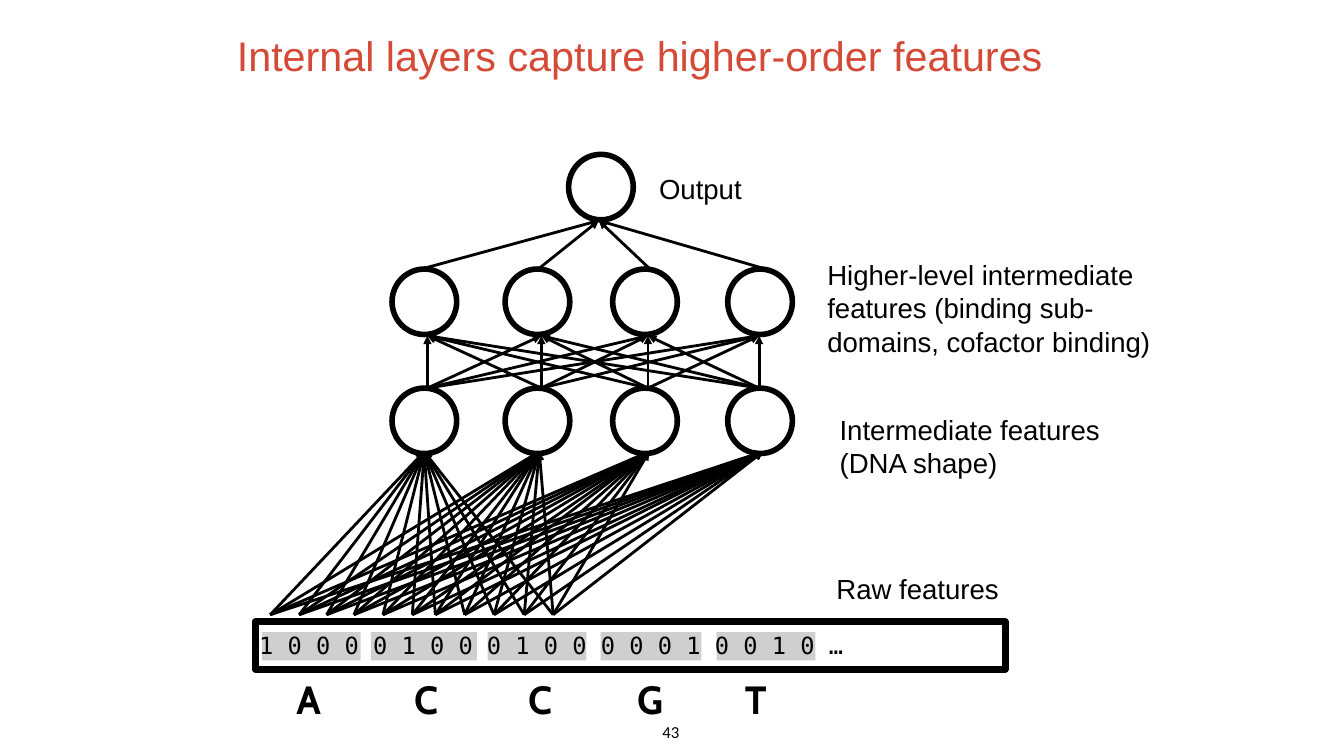
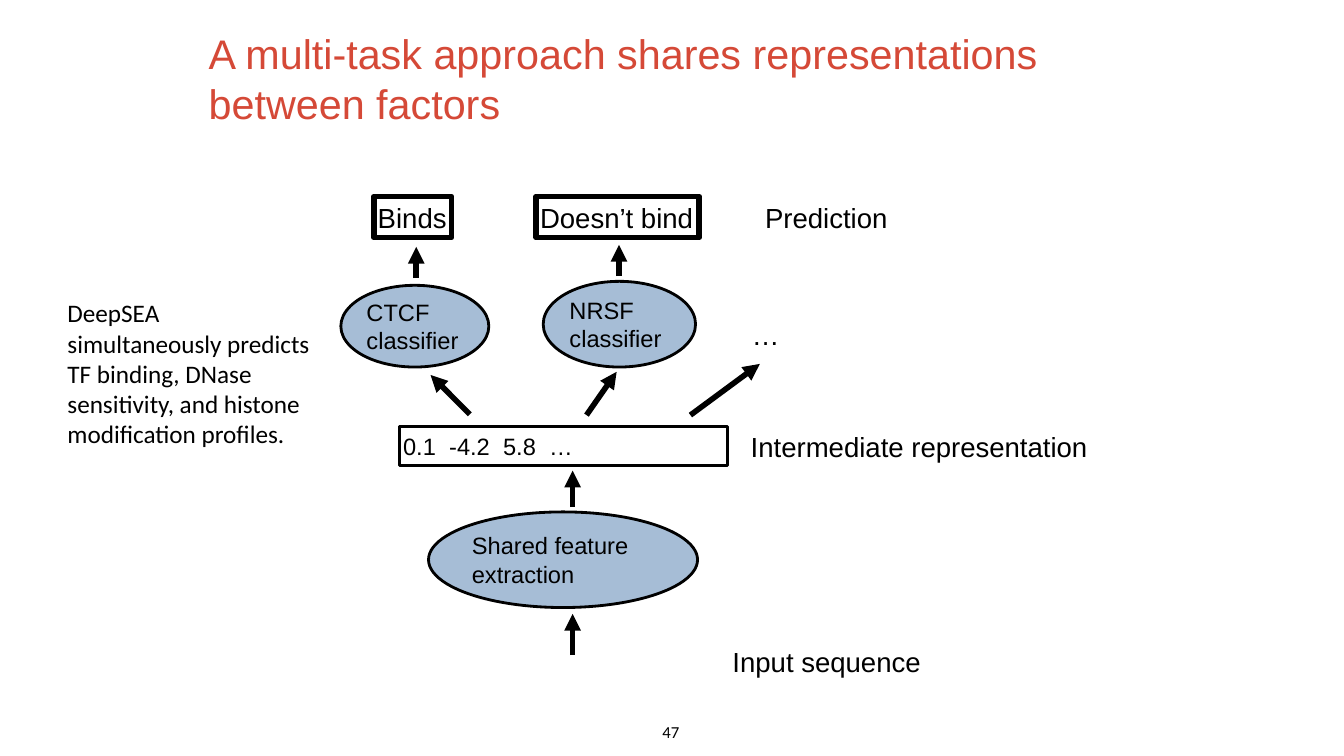
from dataclasses import dataclass
from itertools import product

from lxml.etree import SubElement
from pptx import Presentation
from pptx.dml.color import RGBColor
from pptx.enum.shapes import MSO_CONNECTOR, MSO_SHAPE
from pptx.enum.text import MSO_ANCHOR, MSO_AUTO_SIZE, PP_ALIGN
from pptx.oxml.ns import qn
from pptx.util import Cm, Pt


@dataclass(frozen=True)
class Theme:
    title_color: RGBColor = RGBColor(0xD5, 0x49, 0x37)
    ink: RGBColor = RGBColor(0, 0, 0)
    paper: RGBColor = RGBColor(0xFF, 0xFF, 0xFF)
    module_fill: RGBColor = RGBColor(0xA6, 0xBD, 0xD6)
    font: str = "Arial"
    note_font: str = "Calibri"
    code_font: str = "DejaVu Sans Mono"
    letter_font: str = "Cabin"
    title_size: float = 29.5
    letter_size: float = 28.1
    label_size: float = 19.7
    note_size: float = 18
    module_size: float = 16.9
    number_size: float = 12
    thin: float = 2
    thick: float = 4
    frame: float = 5


THEME = Theme()

NODE_WIDTH, NODE_HEIGHT = 1.63, 1.65
NODE_LEFTS = (9.88, 12.73, 15.44, 18.34)
UPPER_TOP, LOWER_TOP = 6.78, 9.78
OUTER_PORTS = (10.69, 13.59, 16.36, 19.23)
INNER_PORTS = (10.77, 13.64, 16.33, 19.13)
INPUT_PORTS = (6.81, 7.54, 8.23, 8.92, 9.65, 10.39, 10.97, 11.71, 12.45, 13.21, 13.94)
BASES = (
    ("A", 7.34, 6.6, 2.49),
    ("C", 10.31, 9.35, 2.67),
    ("C", 13.18, 12.29, 2.49),
    ("G", 15.93, 15.14, 2.54),
    ("T", 18.64, 18.06, 2.49),
)


def write_text(shape, text, *, size=THEME.label_size, font=THEME.font, color=THEME.ink,
               bold=False, align=PP_ALIGN.LEFT, anchor=MSO_ANCHOR.MIDDLE,
               insets=(0.1, 0.1), wrap=True, grow=False, tabs=()):
    frame = shape.text_frame
    frame.word_wrap = wrap
    frame.auto_size = MSO_AUTO_SIZE.SHAPE_TO_FIT_TEXT if grow else MSO_AUTO_SIZE.NONE
    frame.vertical_anchor = anchor
    frame.margin_left = frame.margin_right = Cm(insets[0])
    frame.margin_top = frame.margin_bottom = Cm(insets[1])
    frame.text = text
    for paragraph in frame.paragraphs:
        paragraph.alignment = align
        if tabs:
            tab_list = SubElement(paragraph._p.get_or_add_pPr(), qn("a:tabLst"))
            for position in tabs:
                SubElement(tab_list, qn("a:tab"), pos=str(Cm(position)), algn="l")
        for run in paragraph.runs:
            run.font.size = Pt(size)
            run.font.name = font
            run.font.bold = bold
            run.font.color.rgb = color


def add_text(slide, box, text, **text_format):
    textbox = slide.shapes.add_textbox(*map(Cm, box))
    write_text(textbox, text, **text_format)


def add_label(slide, box, text, wrap=False):
    add_text(slide, box, text, wrap=wrap, grow=True)


def add_box(slide, kind, box, fill=None, line_width=None, opacity=None):
    shape = slide.shapes.add_shape(kind, *map(Cm, box))
    shape.shadow.inherit = False
    if fill is None:
        shape.fill.background()
    else:
        shape.fill.solid()
        shape.fill.fore_color.rgb = fill
    if opacity is not None:
        color = shape._element.spPr.find(qn("a:solidFill")).find(qn("a:srgbClr"))
        SubElement(color, qn("a:alpha"), val=str(opacity * 1000))
    if line_width is None:
        shape.line.fill.background()
    else:
        shape.line.color.rgb = THEME.ink
        shape.line.width = Pt(line_width)
    return shape


def add_arrow(slide, start, end, width):
    connector = slide.shapes.add_connector(MSO_CONNECTOR.STRAIGHT, *map(Cm, (*start, *end)))
    connector.line.color.rgb = THEME.ink
    connector.line.width = Pt(width)
    SubElement(connector.line._get_or_add_ln(), qn("a:tailEnd"), type="triangle")
    SubElement(connector._element.spPr, qn("a:effectLst"))


def connect_layers(slide, sources, source_y, targets, target_y):
    for target, source in product(targets, sources):
        add_arrow(slide, (source, source_y), (target, target_y), THEME.thin)


def add_node(slide, left, top):
    add_box(slide, MSO_SHAPE.OVAL, (left, top, NODE_WIDTH, NODE_HEIGHT),
            line_width=THEME.thick)


def add_module(slide, box, text):
    module = add_box(slide, MSO_SHAPE.OVAL, box, THEME.module_fill, THEME.thin)
    write_text(module, text, size=THEME.module_size)


def add_prediction(slide, box, text):
    prediction = add_box(slide, MSO_SHAPE.RECTANGLE, box, line_width=THEME.thick)
    write_text(prediction, text, wrap=False, grow=True)


def add_titled_slide(presentation, title, title_box, number):
    slide = presentation.slides.add_slide(presentation.slide_layouts[6])
    add_text(slide, title_box, title, size=THEME.title_size, color=THEME.title_color,
             insets=(0.33, 0.33), grow=True)
    add_text(slide, (16.54, 18.03, 0.74, 0.79), number, size=THEME.number_size,
             font=THEME.note_font, align=PP_ALIGN.CENTER, anchor=MSO_ANCHOR.TOP,
             insets=(0.15, 0.15), wrap=False)
    return slide


def add_sequence(slide):
    strip = add_box(slide, MSO_SHAPE.RECTANGLE, (6.43, 15.67, 18.9, 1.19),
                    line_width=THEME.frame)
    write_text(strip, "1 0 0 0 0 1 0 0 0 1 0 0 0 0 0 1 0 0 1 0 …",
               size=THEME.module_size, font=THEME.code_font)
    for letter, letter_left, shade_left, shade_width in BASES:
        add_text(slide, (letter_left, 16.84, 0.99, 1.52), letter, size=THEME.letter_size,
                 font=THEME.letter_font, bold=True, insets=(0.13, 0.13))
        add_box(slide, MSO_SHAPE.RECTANGLE, (shade_left, 15.93, shade_width, 0.71),
                THEME.ink, opacity=19)


def build_layers_slide(presentation):
    slide = add_titled_slide(presentation, "Internal layers capture higher-order features",
                             (5.64, 0.43, 23.06, 1.93), "43")
    add_sequence(slide)
    for top, left in product((LOWER_TOP, UPPER_TOP), NODE_LEFTS):
        add_node(slide, left, top)
    add_node(slide, 14.33, 3.89)
    connect_layers(slide, INPUT_PORTS, 15.49, OUTER_PORTS, 11.38)
    connect_layers(slide, INNER_PORTS, 9.78, INNER_PORTS, 8.46)
    connect_layers(slide, OUTER_PORTS, 6.76, (15.09,), 5.56)
    for box, text in (
        ((20.98, 14.3, 6.88, 1.04), "Raw features"),
        ((21.06, 10.29, 6.88, 1.88), "Intermediate features\n(DNA shape)"),
        ((16.51, 4.22, 6.88, 1.04), "Output"),
        ((20.75, 6.4, 8.97, 2.72),
         "Higher-level intermediate features (binding sub-domains, cofactor binding)"),
    ):
        add_label(slide, box, text, wrap=True)


def build_multitask_slide(presentation):
    slide = add_titled_slide(
        presentation, "A multi-task approach shares representations between factors",
        (4.93, 0.36, 23.06, 3.2), "47")
    for box, text in (
        ((10.8, 12.9, 6.78, 2.41), "Shared feature extraction"),
        ((8.59, 7.19, 3.73, 2.06), "CTCF classifier"),
        ((13.69, 7.09, 3.84, 2.16), "NRSF classifier"),
    ):
        add_module(slide, box, text)
    vector = add_box(slide, MSO_SHAPE.RECTANGLE, (10.06, 10.74, 8.28, 0.99),
                     THEME.paper, THEME.thin)
    write_text(vector, "0.1\t-4.2\t5.8\t…", size=THEME.module_size, tabs=(1.16, 2.52, 3.68))
    add_prediction(slide, (9.42, 4.95, 1.96, 1.04), "Binds")
    add_prediction(slide, (13.51, 4.95, 4.11, 1.04), "Doesn’t bind")
    for start, end in (
        ((14.43, 16.51), (14.43, 15.47)),
        ((14.43, 12.78), (14.43, 11.86)),
        ((11.84, 10.44), (10.85, 9.45)),
        ((14.78, 10.46), (15.54, 9.37)),
        ((17.4, 10.46), (19.15, 9.17)),
        ((10.49, 7.01), (10.49, 6.22)),
        ((15.6, 6.96), (15.6, 6.17)),
    ):
        add_arrow(slide, start, end, THEME.thick)
    for left, top, width, text in (
        (19.18, 4.95, 3.33, "Prediction"),
        (18.85, 7.92, 0.91, "…"),
        (18.82, 10.72, 8.81, "Intermediate representation"),
        (18.36, 16.15, 5.03, "Input sequence"),
    ):
        add_label(slide, (left, top, width, 1.04), text)
    add_text(slide, (1.45, 7.37, 6.78, 4.11),
             "DeepSEA simultaneously predicts TF binding, DNase sensitivity, "
             "and histone modification profiles.",
             size=THEME.note_size, font=THEME.note_font, anchor=MSO_ANCHOR.TOP,
             insets=(0.25, 0.13), grow=True)


def main():
    presentation = Presentation()
    presentation.slide_width = Cm(33.87)
    presentation.slide_height = Cm(19.05)
    build_layers_slide(presentation)
    build_multitask_slide(presentation)
    presentation.save("out.pptx")


if __name__ == "__main__":
    main()
